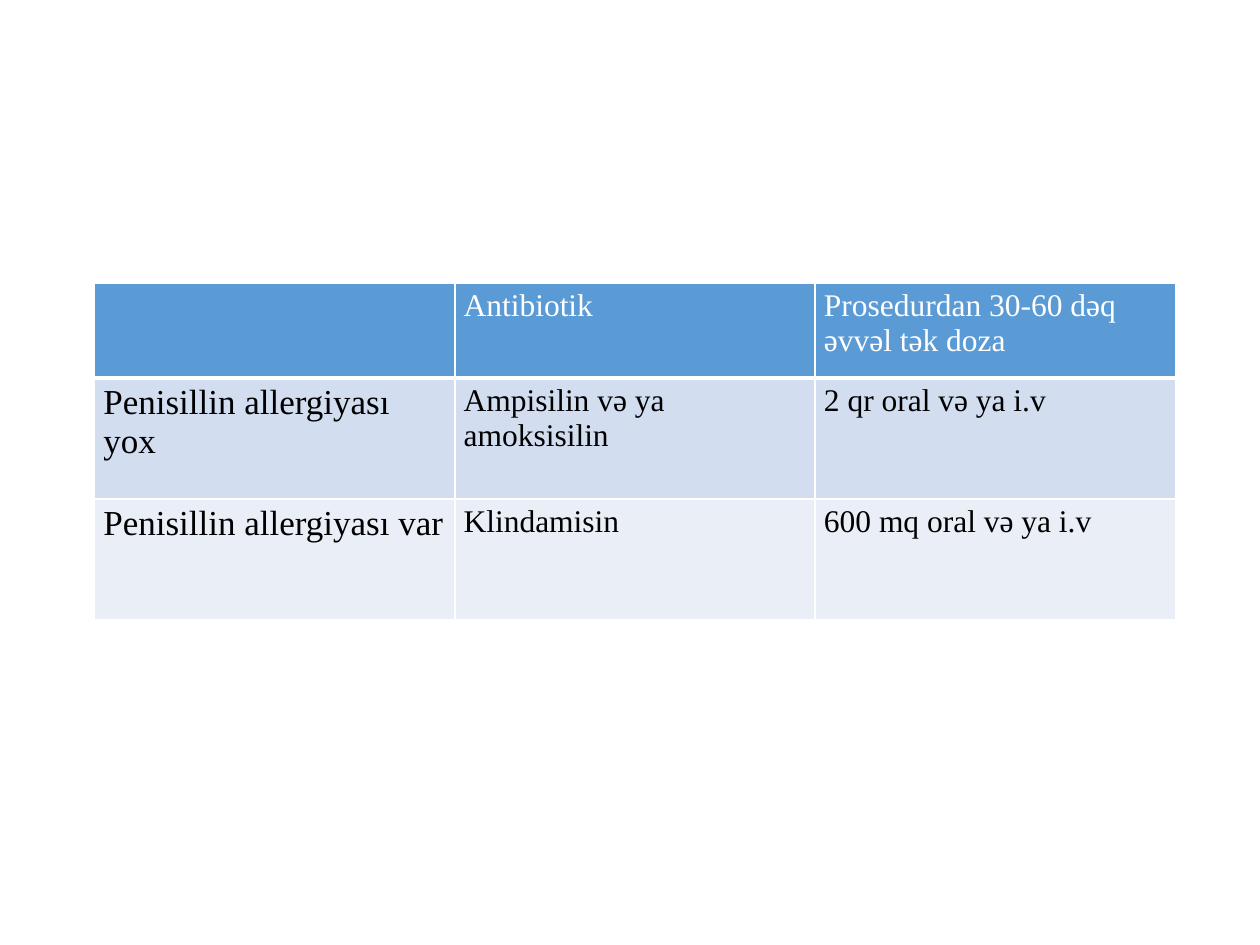
import pptx
import pptx.util
import pptx.dml.color
import pptx.oxml.ns
import lxml.etree

Inch, Pt = pptx.util.Inches, pptx.util.Pt


def color(code):
    return pptx.dml.color.RGBColor.from_string(code)


def border(cell, side, width):
    props = cell._tc.get_or_add_tcPr()
    name = pptx.oxml.ns.qn
    line = lxml.etree.SubElement(props, name("a:ln" + side), w=str(Pt(width)))
    fill = lxml.etree.SubElement(line, name("a:solidFill"))
    lxml.etree.SubElement(fill, name("a:srgbClr"), val="FFFFFF")


# Slide
deck = pptx.Presentation()
deck.slide_width, deck.slide_height = Inch(10), Inch(7.5)
slide = deck.slides.add_slide(deck.slide_layouts[6])

# Row height, fill, text colour and words
rows = [
    (0.75, "5B9BD5", "FFFFFF",
     ["", "Antibiotik", "Prosedurdan 30-60 dəq əvvəl tək doza"]),
    (0.96, "D2DEEF", "000000",
     ["Penisillin allergiyası yox", "Ampisilin və ya amoksisilin", "2 qr oral və ya i.v"]),
    (0.96, "EAEFF7", "000000",
     ["Penisillin allergiyası var", "Klindamisin", "600 mq oral və ya i.v"]),
]

# Table
wide = 2.86
frame = slide.shapes.add_table(3, 3, Inch(0.75), Inch(2.25), Inch(3 * wide), Inch(2.67))
table = frame.table
for col in table.columns:
    col.width = Inch(wide)

for r, (high, fill, ink, words) in enumerate(rows):
    table.rows[r].height = Inch(high)
    for c, text in enumerate(words):
        cell = table.cell(r, c)
        # The header has a heavier lower edge
        for side in "LRTB":
            border(cell, side, 3 if r == 0 and side == "B" else 1)
        cell.fill.solid()
        cell.fill.fore_color.rgb = color(fill)
        cell.margin_left = cell.margin_right = Inch(0.07)
        cell.margin_top = cell.margin_bottom = Inch(0.04)
        cell.text = text
        font = cell.text_frame.paragraphs[0].font
        font.name = "Times New Roman"
        font.size = Pt(20 if r and c == 0 else 18)
        font.bold = False
        font.color.rgb = color(ink)

deck.save("out.pptx")
